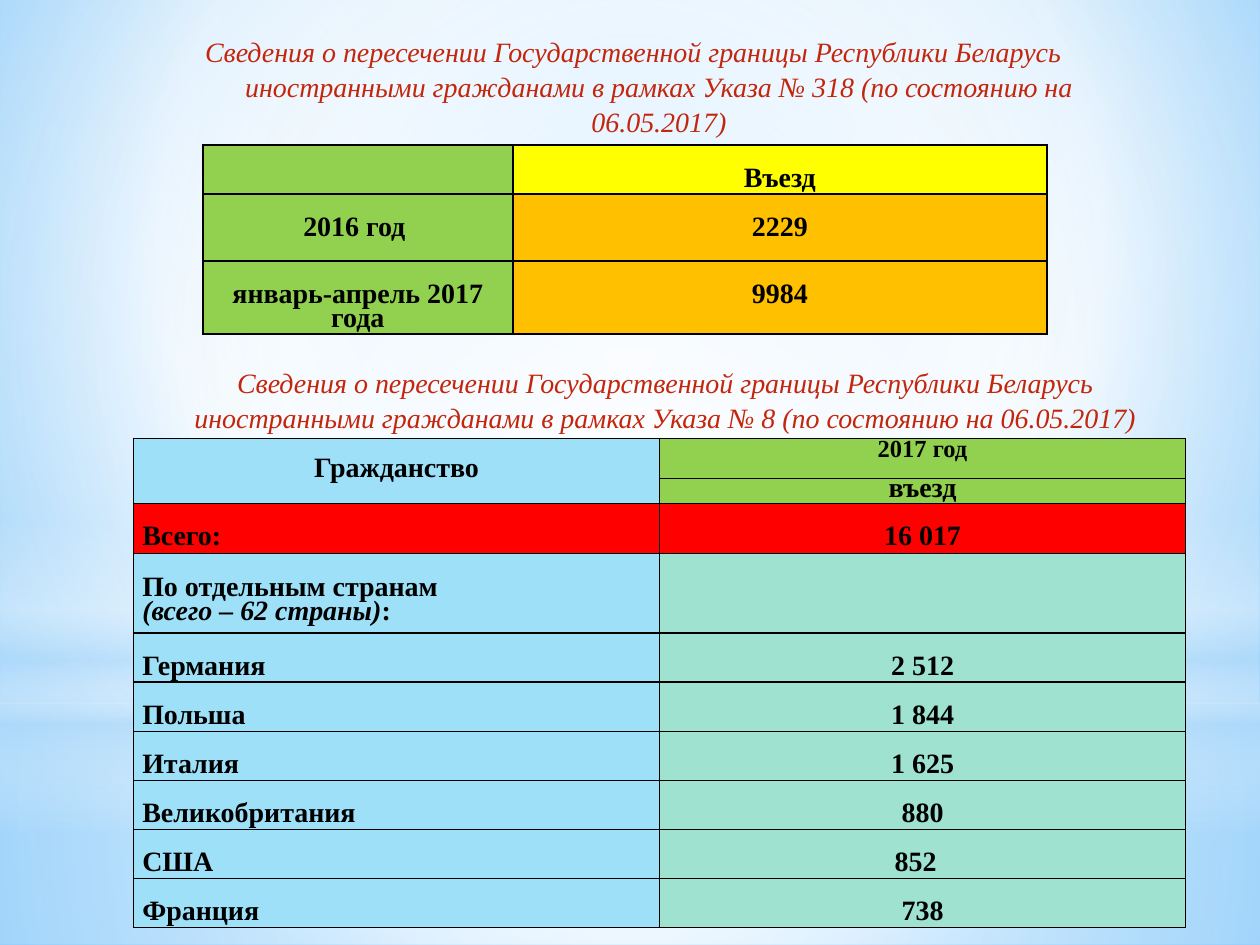
from dataclasses import dataclass
from pptx import Presentation
from pptx.dml.color import RGBColor
from pptx.enum.shapes import MSO_SHAPE
from pptx.enum.text import MSO_ANCHOR, PP_ALIGN
from pptx.oxml import parse_xml
from pptx.util import Inches, Pt

LEFT, CENTER = PP_ALIGN.LEFT, PP_ALIGN.CENTER
TOP, MIDDLE = MSO_ANCHOR.TOP, MSO_ANCHOR.MIDDLE
RECTANGLE, OVAL = MSO_SHAPE.RECTANGLE, MSO_SHAPE.OVAL
NAMESPACE = 'xmlns:a="http://schemas.openxmlformats.org/drawingml/2006/main"'


@dataclass(frozen=True)
class Theme:
    font: str = "Times New Roman"
    body: int = 16
    small: int = 14
    leading: int = 14
    title: str = "C3260C"
    ink: str = "000000"
    green: str = "92D050"
    yellow: str = "FFFF00"
    orange: str = "FFC000"
    red: str = "FF0000"
    blue: str = "9EE0F8"
    mint: str = "9EE2CF"
    white: str = "FFFFFF"
    haze: str = "B4DCFA"
    sky: str = "9ED5FF"
    deep_sky: str = "5BB9FF"


THEME = Theme()
BLANK_LINE = 0.19  # offset of one line above the text in a cell


def gradient(stops, focus=None):
    """Stops are (position, colour, opacity); focus is l, t, r, b in percent."""
    marks = "".join(
        f'<a:gs pos="{position * 1000}"><a:srgbClr val="{color}">'
        f'<a:alpha val="{opacity * 1000}"/></a:srgbClr></a:gs>'
        for position, color, opacity in stops)
    if focus:
        sides = " ".join(f'{side}="{value * 1000}"' for side, value in zip("ltrb", focus))
        course = f'<a:path path="circle"><a:fillToRect {sides}/></a:path>'
    else:
        course = '<a:lin ang="5400000" scaled="0"/>'
    return parse_xml(f'<a:gradFill {NAMESPACE} rotWithShape="1">'
                     f'<a:gsLst>{marks}</a:gsLst>{course}</a:gradFill>')


def put_gradient(parent, fill, stops, focus):
    fill.background()
    empty = parent.xpath("./a:noFill")[0]
    parent.replace(empty, gradient(stops, focus))


def add_backdrop(page):
    white, haze = THEME.white, THEME.haze
    middle = (50, 50, 50, 50)
    fill = page.background.fill
    fill.background()
    put_gradient(page.element.xpath("./p:cSld/p:bg/p:bgPr")[0], fill,
                 [(0, THEME.sky, 100), (60, white, 100), (100, THEME.deep_sky, 100)],
                 (20, 10, 20, 60))
    layers = [
        (RECTANGLE, 5.58, 1.92, [(0, white, 91), (37, white, 76), (100, haze, 79)], middle),
        (RECTANGLE, 0, 5.58, [(0, white, 89), (48, white, 62), (100, haze, 79)], middle),
        (RECTANGLE, 4.12, 2.5, [(0, white, 0), (29, white, 30), (45, haze, 40),
                                (55, white, 26), (65, haze, 60), (100, white, 0)], None),
        (OVAL, 1.75, 5.58, [(0, white, 100), (56, white, 0)], middle),
    ]
    for kind, top, height, stops, focus in layers:
        layer = page.shapes.add_shape(kind, 0, Inches(top), Inches(10), Inches(height))
        layer.shadow.inherit = False
        layer.line.fill.background()
        put_gradient(layer.element.spPr, layer.fill, stops, focus)


def add_span(para, text, color, size=THEME.body, bold=False, italic=False):
    span = para.add_run()
    span.text = text
    font = span.font
    font.name, font.size, font.bold, font.italic = THEME.font, Pt(size), bold, italic
    font.color.rgb = RGBColor.from_string(color)


def next_para(frame, index):
    return frame.add_paragraph() if index else frame.paragraphs[0]


def add_heading(page, box, lines):
    frame = page.shapes.add_textbox(*map(Inches, box)).text_frame
    frame.word_wrap = True
    for index, (text, align) in enumerate(lines):
        para = next_para(frame, index)
        para.alignment, para.line_spacing = align, 1.05
        add_span(para, text, THEME.title, italic=True)


def fill_cell(cell, color, lines=(), align=CENTER, size=THEME.body,
              top=BLANK_LINE, right=0.07, anchor=TOP):
    """Each line is a list of (text, italic) spans."""
    properties = cell._tc.get_or_add_tcPr()
    for index, side in enumerate("LRTB"):
        properties.insert(index, parse_xml(
            f'<a:ln{side} {NAMESPACE} w="12700"><a:solidFill>'
            f'<a:srgbClr val="{THEME.ink}"/></a:solidFill></a:ln{side}>'))
    cell.fill.solid()
    cell.fill.fore_color.rgb = RGBColor.from_string(color)
    cell.margin_left, cell.margin_right = Inches(0.07), Inches(right)
    cell.margin_top, cell.margin_bottom = Inches(top), 0
    cell.vertical_anchor = anchor
    for index, spans in enumerate(lines):
        para = next_para(cell.text_frame, index)
        para.alignment, para.line_spacing = align, Pt(THEME.leading)
        for text, italic in spans:
            add_span(para, text, THEME.ink, size, bold=True, italic=italic)


def plain(text):
    return [[(text, False)]]


def add_grid(page, box, widths, heights):
    table = page.shapes.add_table(len(heights), len(widths), *map(Inches, box)).table
    for column, width in zip(table.columns, widths):
        column.width = Inches(width)
    for row, height in zip(table.rows, heights):
        row.height = Inches(height)
    return table


def add_entry_table(page, box):
    table = add_grid(page, box, [2.46, 4.24], [0.39, 0.53, 0.58])
    fill_cell(table.cell(0, 0), THEME.green, top=0)
    fill_cell(table.cell(0, 1), THEME.yellow, plain("Въезд"))
    for row, (period, count) in enumerate(
            [("2016 год ", "2229"), ("январь-апрель 2017 года", "9984")], 1):
        fill_cell(table.cell(row, 0), THEME.green, plain(period))
        fill_cell(table.cell(row, 1), THEME.orange, plain(count))


def add_country_table(page, box):
    countries = [("Германия", "2 512"), ("Польша", "1 844"), ("Италия", "1 625"),
                 ("Великобритания", "880"), ("США", "852"), ("Франция", "738")]
    table = add_grid(page, box, [4.175] * 2,
                     [0.32, 0.19, 0.4, 0.63] + [0.39] * len(countries))
    # Header
    table.cell(0, 0).merge(table.cell(1, 0))
    fill_cell(table.cell(0, 0), THEME.blue, plain("Гражданство"), top=0, anchor=MIDDLE)
    fill_cell(table.cell(1, 0), THEME.blue, top=0)
    fill_cell(table.cell(0, 1), THEME.green, plain("2017 год"), size=THEME.small, top=0)
    fill_cell(table.cell(1, 1), THEME.green, plain("въезд"), top=0)
    # Totals
    fill_cell(table.cell(2, 0), THEME.red, plain("Всего:"), LEFT)
    fill_cell(table.cell(2, 1), THEME.red, plain("16 017"))
    fill_cell(table.cell(3, 0), THEME.blue,
              plain("По отдельным странам") + [[("(всего – 62 страны)", True), (":", False)]],
              LEFT)
    fill_cell(table.cell(3, 1), THEME.mint, top=0)
    # Countries
    for row, (country, count) in enumerate(countries, 4):
        fill_cell(table.cell(row, 0), THEME.blue, plain(country), LEFT)
        fill_cell(table.cell(row, 1), THEME.mint, plain(count),
                  right=0.18 if country == "США" else 0.07)


def main():
    deck = Presentation()
    deck.slide_width, deck.slide_height = Inches(10), Inches(7.5)
    page = deck.slides.add_slide(deck.slide_layouts[6])
    add_backdrop(page)
    subject = "Сведения о пересечении Государственной границы Республики Беларусь"
    decree = "иностранными гражданами в рамках Указа № {} (по состоянию на 06.05.2017)"
    add_heading(page, (1.53, 0.21, 7.4, 0.91),
                [(subject, LEFT), (decree.format(318), CENTER)])
    add_entry_table(page, (1.61, 1.15, 6.7, 1.5))
    add_heading(page, (1.38, 2.84, 7.8, 0.64),
                [(subject, CENTER), (decree.format(8), CENTER)])
    add_country_table(page, (1.06, 3.48, 8.35, 3.88))
    deck.save("out.pptx")


if __name__ == "__main__":
    main()
